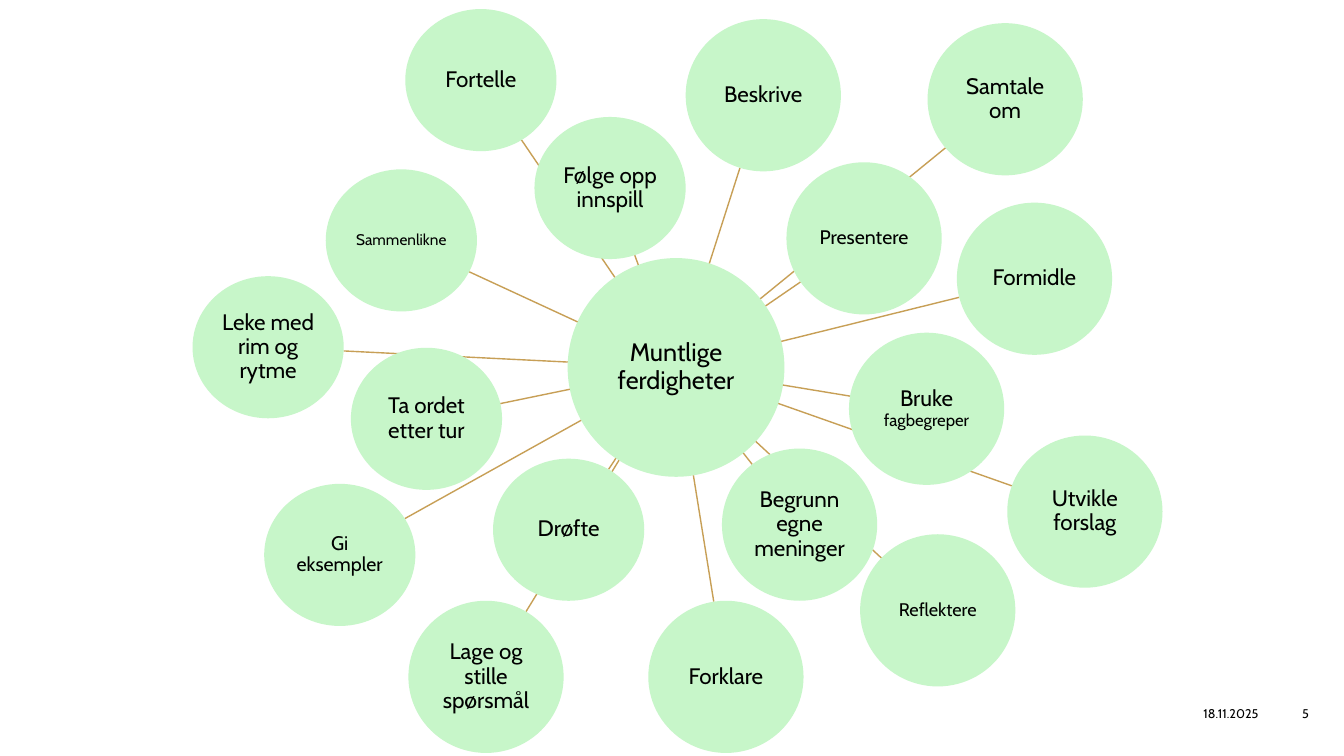
from math import hypot

from lxml import etree
from pptx import Presentation, util as u
from pptx.dml.color import RGBColor
from pptx.enum import shapes, text
from pptx.oxml.ns import qn

WIDTH, HEIGHT = u.Inches(13.33), u.Inches(7.5)
FONT, INK, MINT, OCHRE = "Cabin", "000000", "C7F6C9", "C79F56"

HUB = (50.3, 48.6)
HUB_SIZE = (16.13, 28.93)
LARGE = (11.55, 20.13)
SMALL = (11.25, 18.8)

SKILLS = [
    ("Beskrive", (56.79, 12.6), LARGE, [16]),
    ("Utvikle forslag", (80.72, 67.67), LARGE, [16]),
    ("Samtale om", (74.79, 13.13), LARGE, [16]),
    ("Presentere", (64.29, 31.53), LARGE, [14]),
    ("Formidle", (76.97, 36.87), LARGE, [16]),
    ("Bruke |fagbegreper", (68.94, 54.07), LARGE, [16, 12]),
    ("Reflektere", (69.77, 80.73), LARGE, [13]),
    ("Begrunn egne meninger", (59.49, 69.4), LARGE, [16]),
    ("Forklare", (54.01, 89.53), LARGE, [16]),
    ("Lage og stille spørsmål", (36.16, 89.53), LARGE, [16]),
    ("Drøfte", (42.31, 70.07), SMALL, [16]),
    ("Gi eksempler", (25.28, 73.4), SMALL, [14]),
    ("Leke med rim og rytme", (19.95, 45.93), SMALL, [16]),
    ("Ta ordet etter tur", (31.73, 55.4), SMALL, [16]),
    ("Sammenlikne", (29.86, 31.8), SMALL, [11]),
    ("Fortelle", (35.78, 10.6), SMALL, [16]),
    ("Følge opp innspill", (45.39, 24.87), SMALL, [16]),
]


def color(value):
    """Turn a hex string into a colour."""
    return RGBColor.from_string(value)


def to_emu(point):
    """Turn percentages of the slide's width and height into lengths."""
    return int(point[0] * WIDTH / 100), int(point[1] * HEIGHT / 100)


def box_around(center, size):
    """Return left, top, width and height of a box around its centre."""
    corner = [middle - length / 2 for middle, length in zip(center, size)]
    return *to_emu(corner), *to_emu(size)


def write(frame, wording, sizes, align):
    """Fill a frame with one paragraph, its runs separated by a bar."""
    frame.word_wrap = True
    frame.vertical_anchor = text.MSO_ANCHOR.MIDDLE
    line = frame.paragraphs[0]
    line.alignment = align
    for part, size in zip(wording.split("|"), sizes):
        run = line.add_run()
        run.text = part
        run.font.name = FONT
        run.font.size = u.Pt(size)
        run.font.color.rgb = color(INK)
    return line


def add_bubble(slide, wording, center, size, font_sizes):
    """Draw a round bubble with centred wording."""
    bubble = slide.shapes.add_shape(
        shapes.MSO_SHAPE.OVAL, *box_around(center, size))
    bubble.shadow.inherit = False
    bubble.fill.solid()
    bubble.fill.fore_color.rgb = color(MINT)
    bubble.line.fill.background()
    frame = bubble.text_frame
    frame.margin_left = frame.margin_right = u.Inches(0.01)
    frame.margin_top = frame.margin_bottom = u.Inches(0.01)
    line = write(frame, wording, font_sizes, text.PP_ALIGN.CENTER)
    line.line_spacing = 0.9


def rim_point(center, size, target):
    """Find where the way from an ellipse's centre to a target leaves it."""
    way = [end - start for start, end in zip(center, target)]
    reach = 1 / hypot(*(2 * step / length for step, length in zip(way, size)))
    return [start + reach * step for start, step in zip(center, way)]


def add_spoke(slide, center, size):
    """Join the rim of the hub to the rim of a bubble."""
    spoke = slide.shapes.add_connector(
        shapes.MSO_CONNECTOR.STRAIGHT,
        *to_emu(rim_point(HUB, HUB_SIZE, center)),
        *to_emu(rim_point(center, size, HUB)))
    spoke.line.color.rgb = color(OCHRE)
    spoke.line.width = u.Pt(1)
    etree.SubElement(spoke._element.spPr, qn("a:effectLst"))


def add_footer(slide, wording, center, size, align):
    """Place a small footer text."""
    footer = slide.shapes.add_textbox(*box_around(center, size))
    write(footer.text_frame, wording, [9], align)


def main():
    """Build the slide and save it."""
    deck = Presentation()
    deck.slide_width, deck.slide_height = WIDTH, HEIGHT
    slide = deck.slides.add_slide(deck.slide_layouts[6])
    add_footer(slide, "18.11.2025", (88.86, 94.4), (11.03, 5.33),
               text.PP_ALIGN.RIGHT)
    add_footer(slide, "5", (97.15, 94.4), (5.7, 5.33), text.PP_ALIGN.CENTER)
    add_bubble(slide, "Muntlige ferdigheter", HUB, HUB_SIZE, [18])
    for wording, center, size, font_sizes in SKILLS:
        add_spoke(slide, center, size)
        add_bubble(slide, wording, center, size, font_sizes)
    deck.save("out.pptx")


if __name__ == "__main__":
    main()
